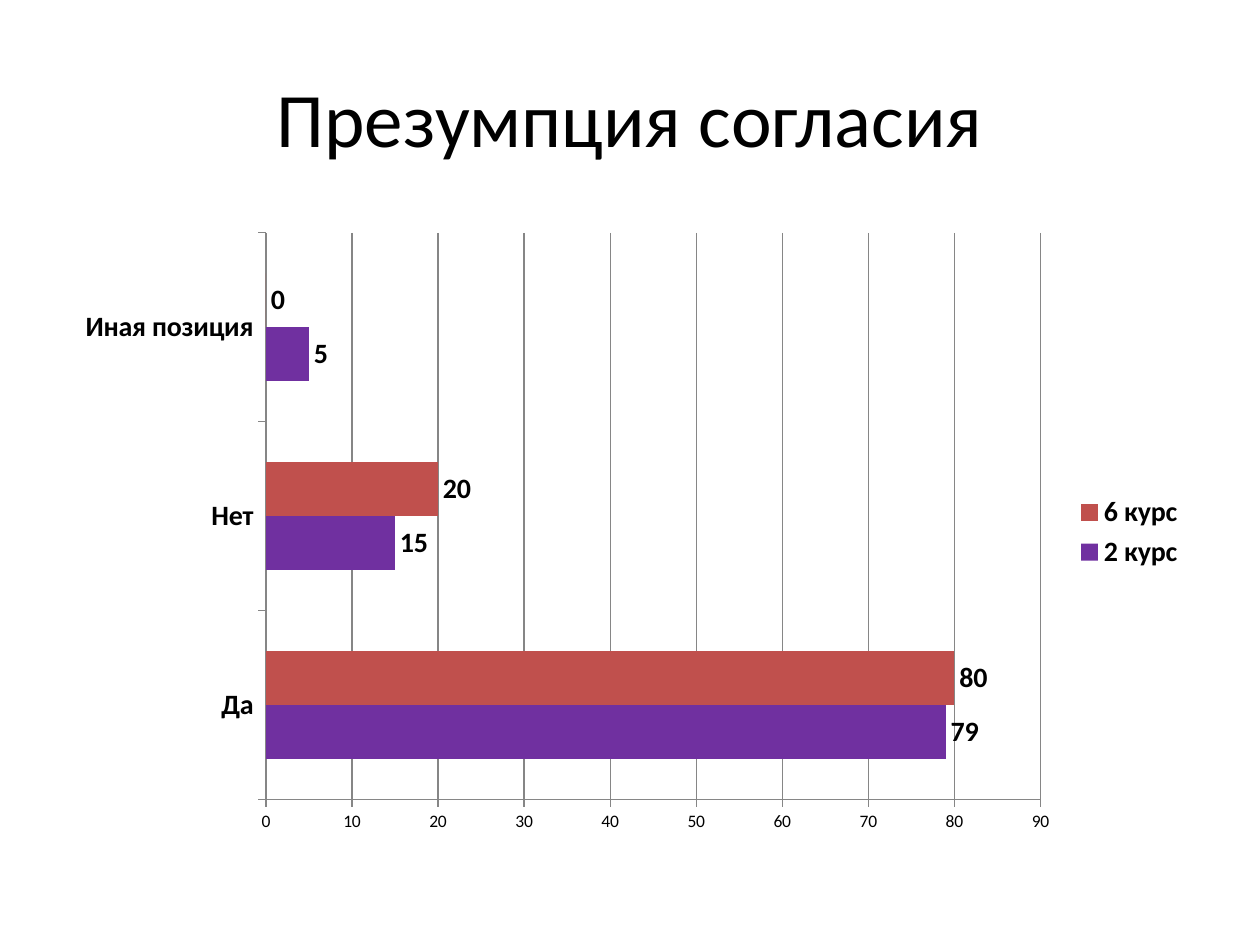
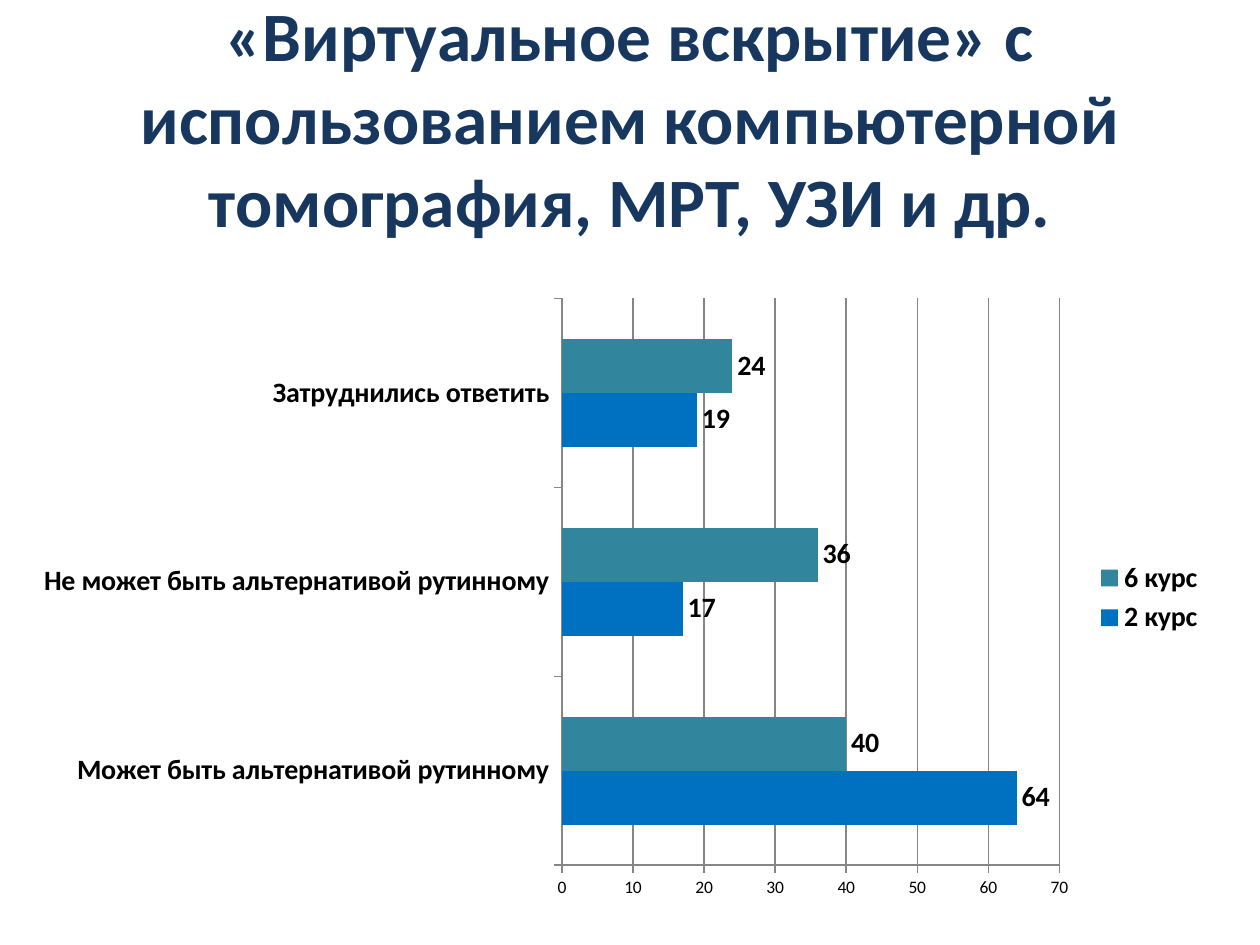
from pptx import Presentation
from pptx.chart.data import CategoryChartData
from pptx.dml.color import RGBColor
from pptx.enum.chart import (XL_CHART_TYPE as ChartType, XL_LABEL_POSITION as LabelPos,
                             XL_LEGEND_POSITION as LegendPos, XL_TICK_MARK as TickMark)
from pptx.enum.text import MSO_ANCHOR, PP_ALIGN
from pptx.util import Inches, Pt

# Shared style
FONT = "Calibri"
BLACK = RGBColor(0x00, 0x00, 0x00)
NAVY = RGBColor(0x17, 0x37, 0x5E)
PURPLE = RGBColor(0x70, 0x30, 0xA0)
RED = RGBColor(0xC0, 0x50, 0x4D)
BLUE = RGBColor(0x00, 0x70, 0xC0)
TEAL = RGBColor(0x31, 0x85, 0x9C)
GRID_GRAY = RGBColor(0x86, 0x86, 0x86)
COURSES = ("2 курс", "6 курс")
TITLE_BOX = (0.5, 0.3, 9, 1.25)


def style_font(font, size, color=BLACK, bold=False):
    font.name = FONT
    font.size = Pt(size)
    font.bold = bold
    font.color.rgb = color


def add_text(slide, text, box, *, size, color=BLACK, bold=False,
             align=PP_ALIGN.CENTER, anchor=MSO_ANCHOR.MIDDLE):
    frame = slide.shapes.add_textbox(*map(Inches, box)).text_frame
    frame.word_wrap = True
    frame.vertical_anchor = anchor
    paragraph = frame.paragraphs[0]
    paragraph.alignment = align
    run = paragraph.add_run()
    run.text = text
    style_font(run.font, size, color, bold)


def style_axis(axis, size, bold=False):
    axis.major_tick_mark = TickMark.OUTSIDE
    axis.minor_tick_mark = TickMark.NONE
    style_font(axis.tick_labels.font, size, bold=bold)
    style_line(axis.format.line)


def style_line(line):
    line.color.rgb = GRID_GRAY
    line.width = Pt(0.75)


def add_survey_chart(slide, box, answers, shares, colors):
    """Compare the answers of the two courses as clustered bars."""
    data = CategoryChartData()
    data.categories = answers
    for course, values in zip(COURSES, shares):
        data.add_series(course, values)
    chart = slide.shapes.add_chart(ChartType.BAR_CLUSTERED, *map(Inches, box), data).chart
    style_font(chart.font, 10)
    chart.has_title = False

    # Axes and grid
    style_axis(chart.category_axis, 16, bold=True)
    chart.category_axis.has_major_gridlines = False
    style_axis(chart.value_axis, 10)
    chart.value_axis.has_major_gridlines = True
    style_line(chart.value_axis.major_gridlines.format.line)

    # Legend
    chart.has_legend = True
    chart.legend.position = LegendPos.RIGHT
    chart.legend.include_in_layout = False
    style_font(chart.legend.font, 16, bold=True)

    # Bars and their values
    plot = chart.plots[0]
    plot.gap_width = 150
    plot.vary_by_categories = False
    for bars, color in zip(plot.series, colors):
        bars.format.fill.solid()
        bars.format.fill.fore_color.rgb = color
        labels = bars.data_labels
        labels.show_value = True
        labels.position = LabelPos.OUTSIDE_END
        style_font(labels.font, 16, bold=True)


def main():
    deck = Presentation()
    deck.slide_width, deck.slide_height = Inches(10), Inches(7.5)
    blank = deck.slide_layouts[6]

    # Presumed consent
    consent = deck.slides.add_slide(blank)
    add_text(consent, "Презумпция согласия", TITLE_BOX, size=44)
    add_survey_chart(consent, (0.5, 1.75, 9, 4.95),
                     ("Да", "Нет", "Иная позиция"),
                     ((79, 15, 5), (80, 20, 0)), (PURPLE, RED))

    # Virtual autopsy
    autopsy = deck.slides.add_slide(blank)
    add_text(autopsy, "«Виртуальное вскрытие» с использованием компьютерной "
             "томография, МРТ, УЗИ и др.", TITLE_BOX, size=39.6, color=NAVY, bold=True)
    add_survey_chart(autopsy, (0.16, 2.27, 9.5, 4.95),
                     ("Может быть альтернативой рутинному",
                      "Не может быть альтернативой рутинному",
                      "Затруднились ответить"),
                     ((64, 17, 19), (40, 36, 24)), (BLUE, TEAL))

    deck.save("out.pptx")


if __name__ == "__main__":
    main()
